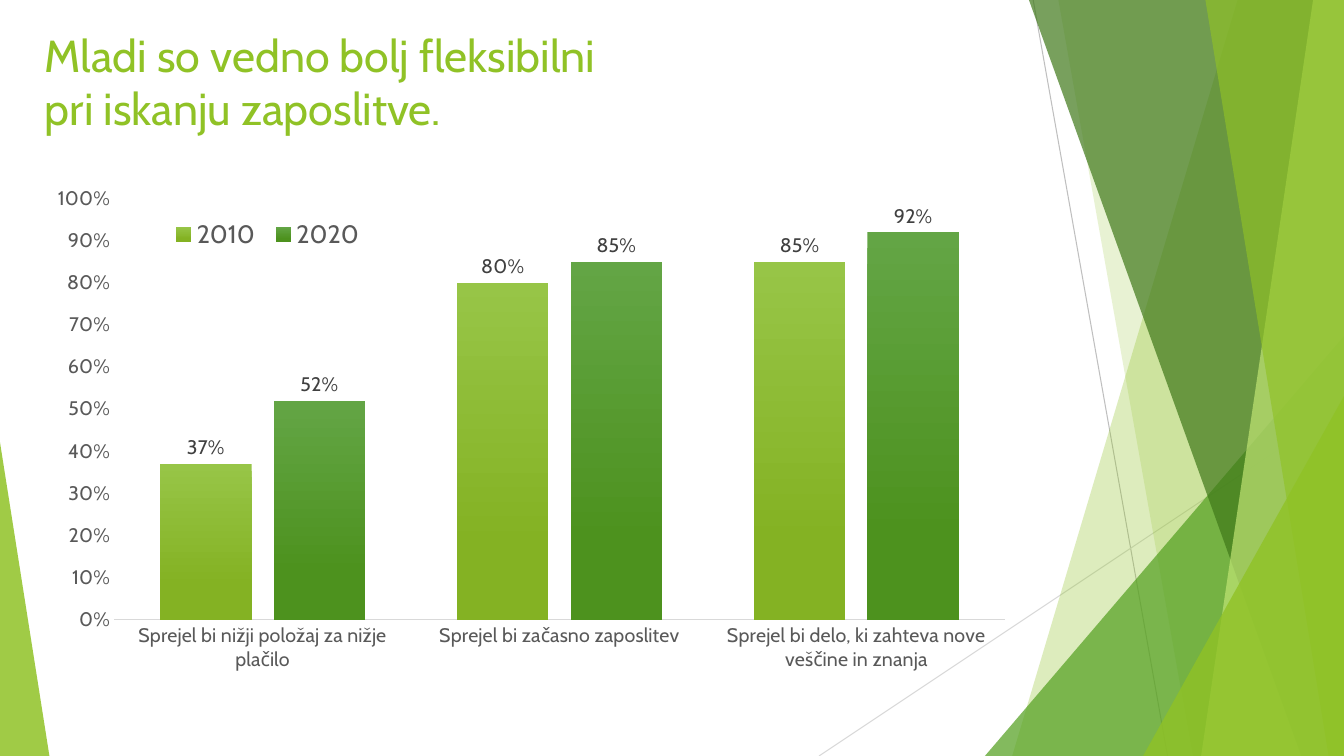
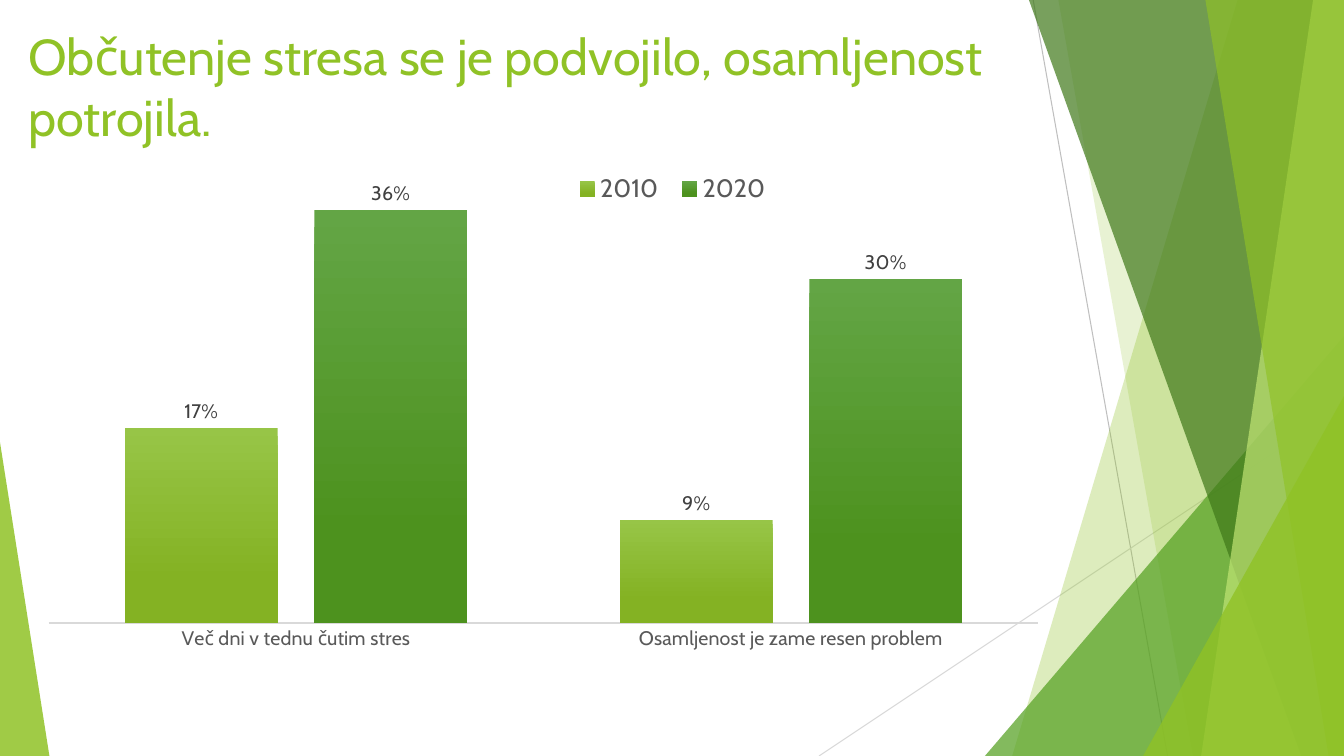
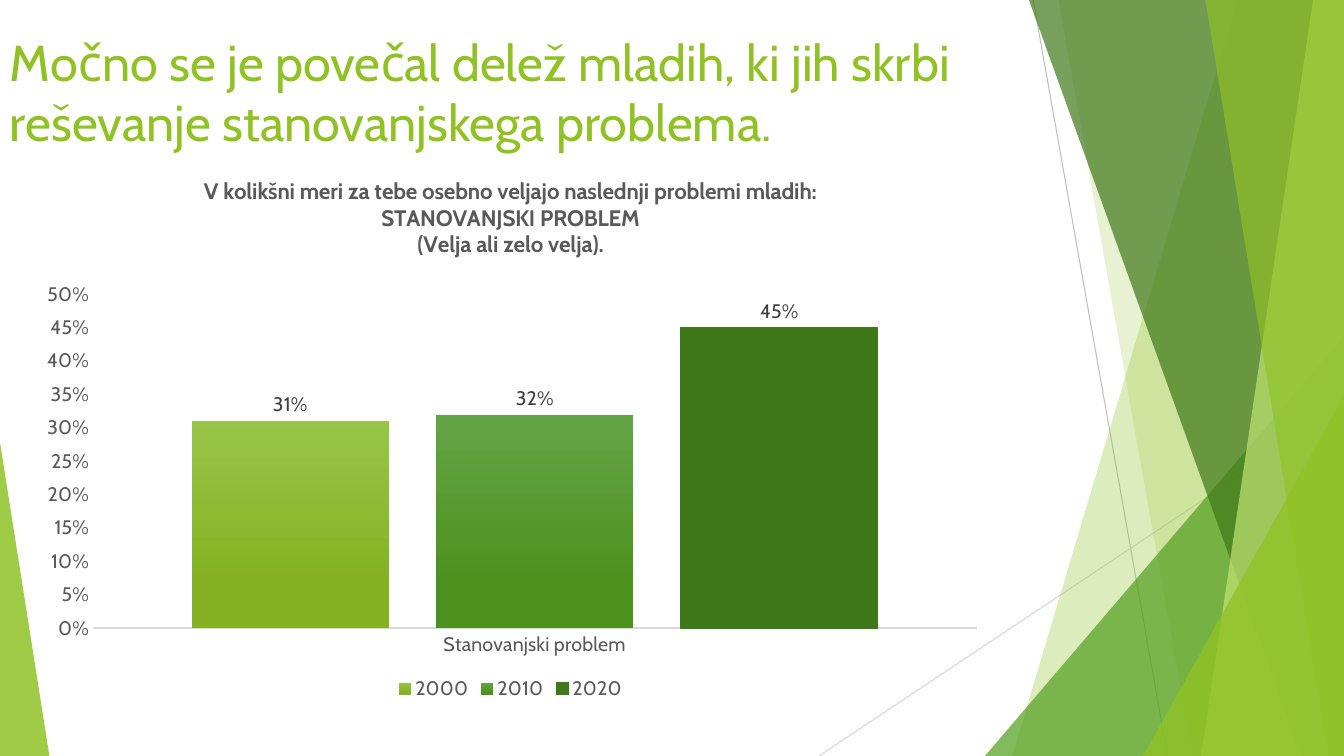
"""Three slides of column charts on young people's work, stress and housing."""
from lxml.etree import SubElement
from pptx import Presentation
from pptx.chart.data import CategoryChartData
from pptx.dml.color import RGBColor
from pptx.enum.chart import XL_CHART_TYPE, XL_LABEL_POSITION, XL_LEGEND_POSITION, XL_TICK_MARK
from pptx.enum.shapes import MSO_CONNECTOR, MSO_SHAPE
from pptx.enum.text import MSO_ANCHOR
from pptx.oxml.ns import qn
from pptx.util import Pt

WIDTH, HEIGHT = 960, 540
FONT = "Cabin"
COLOURS = {
    "lime": "90C226",
    "green": "54A021",
    "forest": "3F7819",
    "pale": "C0E474",
    "lime top": "97C547",
    "lime base": "84B223",
    "green top": "63A545",
    "green base": "4D921E",
    "label": "404040",
    "axis text": "595959",
    "silver": "BFBFBF",
    "mist": "D9D9D9",
}
SERIES_FILLS = [("lime top", "lime base"), ("green top", "green base"), ("forest",)]


def colour(name):
    return RGBColor.from_string(COLOURS[name])


def set_font(font, size, name, bold=False):
    font.name, font.size, font.bold = FONT, Pt(size), bold
    font.color.rgb = colour(name)


def set_layout(parent, index, box, inner=False):
    for old in parent.findall(qn("c:layout")):
        parent.remove(old)
    layout = parent.makeelement(qn("c:layout"))
    manual = SubElement(layout, qn("c:manualLayout"))
    if inner:
        SubElement(manual, qn("c:layoutTarget"), val="inner")
    for mode in ("xMode", "yMode"):
        SubElement(manual, qn(f"c:{mode}"), val="edge")
    for side, share in zip("xywh", box):
        SubElement(manual, qn(f"c:{side}"), val=str(share))
    parent.insert(index, layout)


class Deck:
    def __init__(self):
        self.presentation = Presentation()
        self.presentation.slide_width = Pt(WIDTH)
        self.presentation.slide_height = Pt(HEIGHT)
        self.blank = self.presentation.slide_layouts[6]
        self.slide = None

    def new_slide(self, title, size, box):
        self.slide = self.presentation.slides.add_slide(self.blank)
        self.title(title, size, box)

    def title(self, text, size, box):
        frame = self.slide.shapes.add_textbox(*map(Pt, box)).text_frame
        frame.word_wrap = True
        frame.vertical_anchor = MSO_ANCHOR.TOP
        frame.text = text
        set_font(frame.paragraphs[0].font, size, "lime")

    def to_layout(self, shape):
        self.blank.shapes.element.append(shape.element)

    def ray(self, start, end, name):
        line = self.slide.shapes.add_connector(
            MSO_CONNECTOR.STRAIGHT, *map(Pt, (*start, *end)))
        line.line.color.rgb = colour(name)
        line.line.width = Pt(0.75)
        SubElement(line.element.spPr, qn("a:effectLst"))
        self.to_layout(line)

    def tint(self, shape, name, opacity):
        shape.shadow.inherit = False
        shape.fill.solid()
        shape.fill.fore_color.rgb = colour(name)
        shape.line.fill.background()
        rgb = shape.element.spPr.find(qn("a:solidFill"))[0]
        SubElement(rgb, qn("a:alpha"), val=str(opacity * 1000))
        self.to_layout(shape)

    def facet(self, top_x, bottom_x, name, opacity):
        builder = self.slide.shapes.build_freeform(Pt(top_x), 0)
        corners = [(WIDTH, 0), (WIDTH, HEIGHT), (bottom_x, HEIGHT)]
        builder.add_line_segments([(Pt(x), Pt(y)) for x, y in corners], close=True)
        self.tint(builder.convert_to_shape(), name, opacity)

    def wedge(self, left, top, right, apex, name, opacity):
        shape = self.slide.shapes.add_shape(
            MSO_SHAPE.ISOSCELES_TRIANGLE, Pt(left), Pt(top), Pt(right - left), Pt(HEIGHT - top))
        shape.adjustments[0] = apex
        self.tint(shape, name, opacity)

    def backdrop(self):
        self.slide = self.presentation.slides[0]
        self.ray((738, 0), (834, HEIGHT), "silver")
        self.ray((WIDTH, 290), (585, HEIGHT), "mist")
        self.facet(884, 723, "lime", 30)
        self.facet(756, 852, "lime", 20)
        self.wedge(703.5, 240, WIDTH, 1, "green", 72)
        self.facet(735, 929.5, "forest", 70)
        self.facet(938, 858, "pale", 70)
        self.facet(861, 949, "lime", 65)
        self.wedge(816.5, 283, WIDTH, 1, "lime", 80)
        self.wedge(0, 316, 35.3, 0, "lime", 85)

    def chart(self, box, categories, series, plot_box, top, step,
              legend_size=18, legend_box=None, show_scale=True, heading=None):
        data = CategoryChartData(number_format="0%")
        data.categories = categories
        for name, values in series.items():
            data.add_series(name, values)
        chart = self.slide.shapes.add_chart(
            XL_CHART_TYPE.COLUMN_CLUSTERED, *map(Pt, box), data).chart
        chart.font.name, chart.font.size = FONT, Pt(14)
        self.columns(chart.plots[0])
        self.axes(chart, top, step, show_scale)
        self.legend(chart, legend_size, legend_box)
        set_layout(chart.element.find(".//" + qn("c:plotArea")), 0, plot_box, inner=True)
        chart.has_title = heading is not None
        if heading:
            frame = chart.chart_title.text_frame
            frame.text = heading
            for paragraph in frame.paragraphs:
                set_font(paragraph.font, 16, "axis text", bold=True)

    def columns(self, plot):
        plot.gap_width, plot.overlap = 100, -24
        plot.vary_by_categories = False
        plot.has_data_labels = True
        labels = plot.data_labels
        labels.show_value = True
        labels.position = XL_LABEL_POSITION.OUTSIDE_END
        labels.number_format, labels.number_format_is_linked = "0%", False
        set_font(labels.font, 14, "label")
        for column, names in zip(plot.series, SERIES_FILLS):
            fill = column.format.fill
            if len(names) == 1:
                fill.solid()
                fill.fore_color.rgb = colour(names[0])
                column.format.line.color.rgb = colour(names[0])
                column.format.line.width = Pt(0.75)
                continue
            fill.gradient()
            fill.gradient_angle = 270
            for stop, name, position in zip(fill.gradient_stops, names, (0, 0.78)):
                stop.color.rgb = colour(name)
                stop.position = position

    def axes(self, chart, top, step, show_scale):
        scale = chart.value_axis
        scale.minimum_scale, scale.maximum_scale, scale.major_unit = 0, top, step
        scale.has_major_gridlines = False
        scale.tick_labels.number_format = "0%"
        scale.tick_labels.number_format_is_linked = False
        for axis in (chart.category_axis, scale):
            axis.major_tick_mark = axis.minor_tick_mark = XL_TICK_MARK.NONE
            set_font(axis.tick_labels.font, 14, "axis text")
        scale.format.line.fill.background()
        scale.visible = show_scale
        baseline = chart.category_axis.format.line
        baseline.color.rgb = colour("mist")
        baseline.width = Pt(1)

    def legend(self, chart, size, box):
        chart.has_legend = True
        chart.legend.position = XL_LEGEND_POSITION.BOTTOM
        chart.legend.include_in_layout = False
        set_font(chart.legend.font, size, "axis text")
        if box:
            set_layout(chart.element.find(".//" + qn("c:legend")), 1, box)


def main():
    deck = Deck()
    deck.new_slide("Mladi so vedno bolj fleksibilni\vpri iskanju zaposlitve.",
                   32, (25, 16, 683, 84))
    deck.backdrop()
    deck.chart(
        (25, 126, 707, 396),
        ["Sprejel bi nižji položaj za nižje plačilo", "Sprejel bi začasno zaposlitev",
         "Sprejel bi delo, ki zahteva nove veščine in znanja"],
        {"2010": (0.37, 0.8, 0.85), "2020": (0.52, 0.85, 0.92)},
        plot_box=(0.08, 0.04, 0.9, 0.76), top=1, step=0.1,
        legend_box=(0.13, 0.07, 0.21, 0.07))

    deck.new_slide("Občutenje stresa se je podvojilo, osamljenost potrojila.",
                   36, (13, 14.5, 713.5, 94.5))
    deck.chart(
        (20, 109, 736.5, 400),
        ["Več dni v tednu čutim stres", "Osamljenost je zame resen problem"],
        {"2010": (0.17, 0.09), "2020": (0.36, 0.3)},
        plot_box=(0.02, 0.02, 0.96, 0.82), top=0.4, step=0.05,
        legend_box=(0.52, 0.03, 0.21, 0.07), show_scale=False)

    deck.new_slide(
        "Močno se je povečal delež mladih, ki jih skrbi reševanje stanovanjskega problema.",
        36, (0, 18.5, 729.5, 98.5))
    deck.chart(
        (18, 112.5, 693.5, 391), ["Stanovanjski problem"],
        {"2000": (0.31,), "2010": (0.32,), "2020": (0.45,)},
        plot_box=(0.07, 0.25, 0.91, 0.61), top=0.5, step=0.05, legend_size=14,
        heading="V kolikšni meri za tebe osebno veljajo naslednji problemi mladih:\n"
                "STANOVANJSKI PROBLEM\n(Velja ali zelo velja).")
    deck.presentation.save("out.pptx")


if __name__ == "__main__":
    main()
